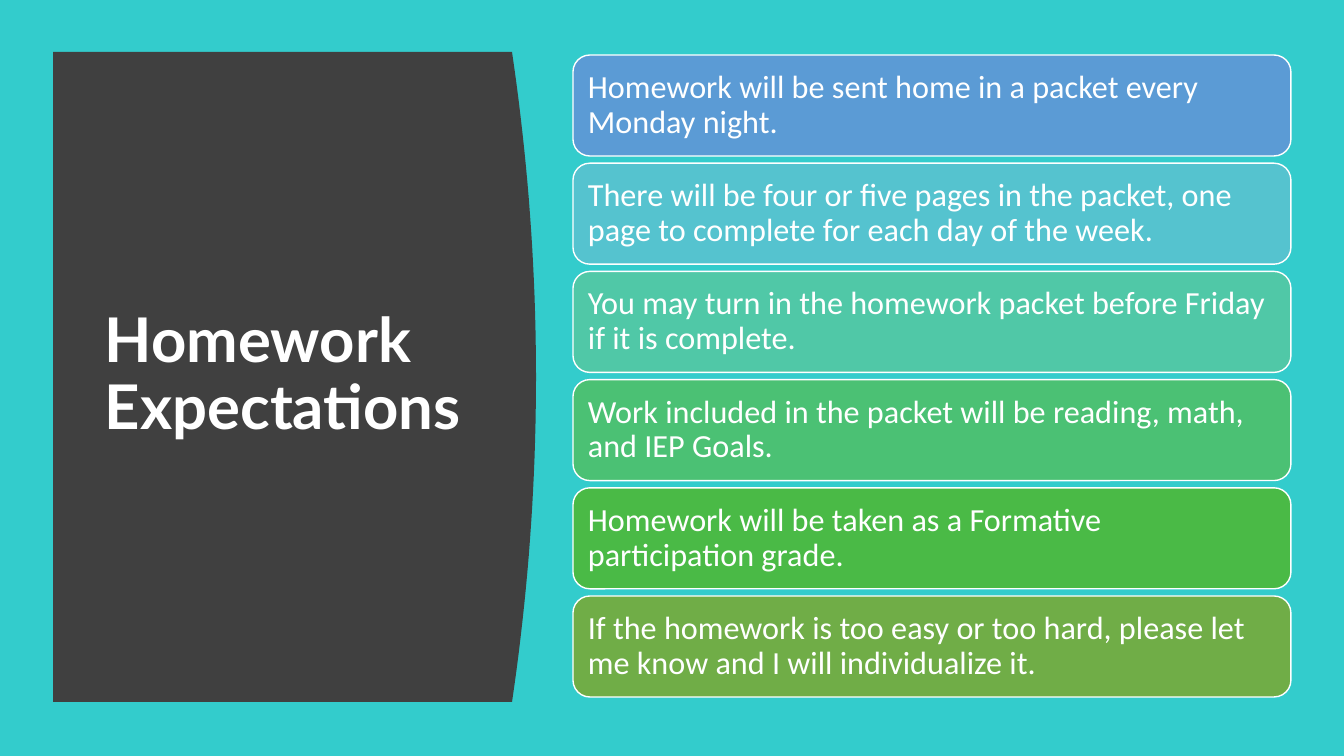
import pptx
import pptx.dml.color
import pptx.enum.shapes
import pptx.enum.text
import pptx.util

SLIDE_WIDTH, SLIDE_HEIGHT = 1344, 756
EMU_PER_PX = 12192000 / SLIDE_WIDTH
WHITE = "FFFFFF"
EXPECTATIONS = [
    ("Homework will be sent home in a packet every Monday night.", "5B9BD5"),
    ("There will be four or five pages in the packet, one page to complete for each day of the week.", "55C3CF"),
    ("You may turn in the homework packet before Friday if it is complete.", "50C8A7"),
    ("Work included in the packet will be reading, math, and IEP Goals.", "4BC174"),
    ("Homework will be taken as a Formative participation grade.", "4ABA46"),
    ("If the homework is too easy or too hard, please let me know and I will individualize it.", "70AD47"),
]


def px(length):
    """Turn pixels into EMU."""
    return pptx.util.Emu(round(length * EMU_PER_PX))


def paint(fill, color):
    """Give a fill one solid colour."""
    fill.solid()
    fill.fore_color.rgb = pptx.dml.color.RGBColor.from_string(color)


def write(frame, text, font_name, size, bold=False):
    """Write one white, left-aligned, vertically centred paragraph."""
    frame.word_wrap = True
    frame.vertical_anchor = pptx.enum.text.MSO_ANCHOR.MIDDLE
    frame.text = text
    paragraph = frame.paragraphs[0]
    paragraph.alignment = pptx.enum.text.PP_ALIGN.LEFT
    paragraph.line_spacing = 0.9
    paragraph.font.name = font_name
    paragraph.font.size = pptx.util.Pt(size)
    paragraph.font.bold = bold
    paint(paragraph.font.fill, WHITE)


def add_title_panel(slide, left, top, width, height):
    """Draw the dark panel with its bowed right edge and the title."""
    bulge, steps = 24, 40
    bowed_edge = []
    for step in range(steps + 1):
        offset = 2 * step / steps - 1
        x = left + width - bulge * offset ** 2
        bowed_edge.append((px(x), px(top + height * step / steps)))
    outline = slide.shapes.build_freeform(px(left), px(top))
    outline.add_line_segments(bowed_edge + [(px(left), px(top + height))], close=True)
    panel = outline.convert_to_shape()
    panel.shadow.inherit = False
    paint(panel.fill, "404040")
    panel.line.fill.background()

    title = slide.shapes.add_textbox(px(left + 42), px(top + 60), px(width - 106), px(height - 122))
    write(title.text_frame, "Homework Expectations", "Lato", 44, bold=True)


def add_expectations(slide, left, top, width, height):
    """Stack the expectation cards evenly from top to bottom of the box."""
    card_height, inset = 101, px(10)
    pitch = (height - card_height) / (len(EXPECTATIONS) - 1)
    for index, (expectation, color) in enumerate(EXPECTATIONS):
        card = slide.shapes.add_shape(
            pptx.enum.shapes.MSO_SHAPE.ROUNDED_RECTANGLE,
            px(left), px(top + index * pitch), px(width), px(card_height))
        card.shadow.inherit = False
        paint(card.fill, color)
        paint(card.line.fill, WHITE)
        card.line.width = pptx.util.Pt(1)
        frame = card.text_frame
        frame.margin_left = frame.margin_right = inset
        frame.margin_top = frame.margin_bottom = inset
        write(frame, expectation, "Calibri", 23)


def main():
    """Build and save the slide."""
    deck = pptx.Presentation()
    deck.slide_width, deck.slide_height = px(SLIDE_WIDTH), px(SLIDE_HEIGHT)
    slide = deck.slides.add_slide(deck.slide_layouts[6])
    paint(slide.background.fill, "33CCCC")
    add_title_panel(slide, 53, 52, 483, 650)
    add_expectations(slide, 573, 55, 718, 642)
    deck.save("out.pptx")


if __name__ == "__main__":
    main()
